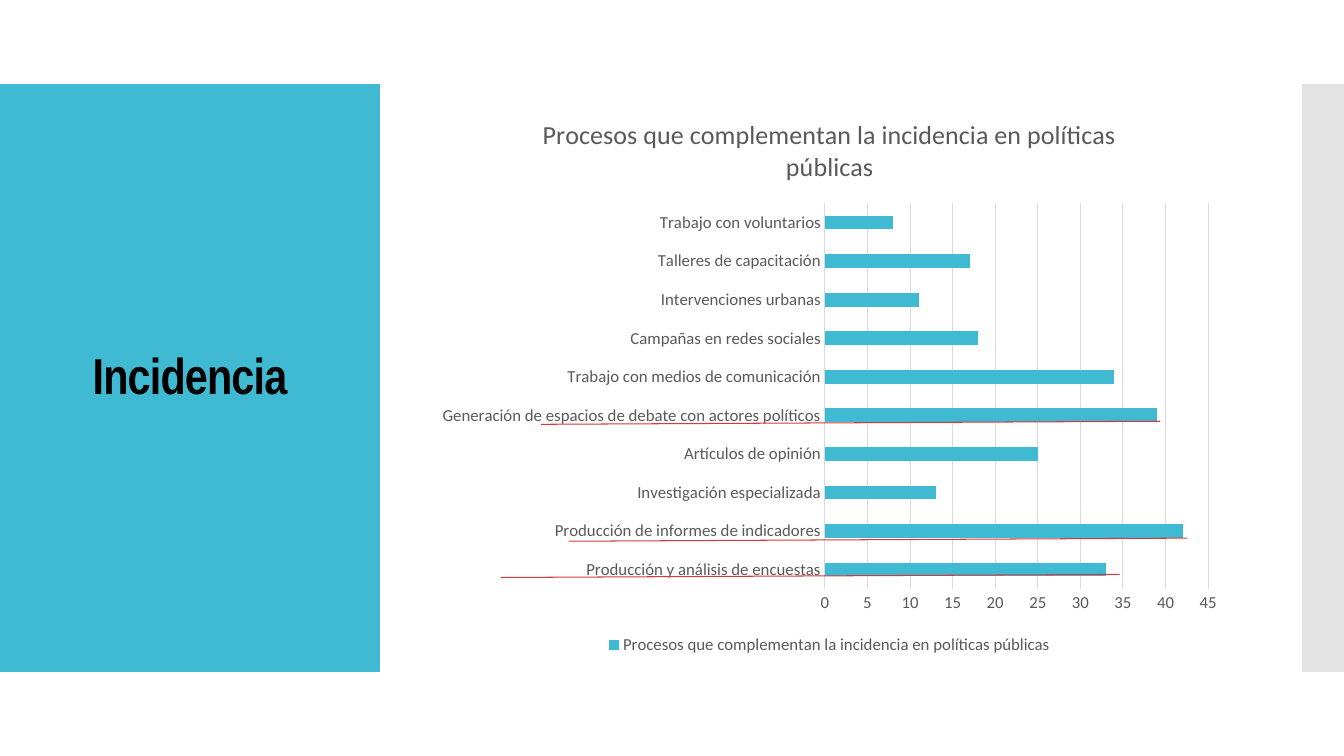
from lxml.etree import SubElement
from pptx import Presentation
from pptx.chart.data import CategoryChartData
from pptx.dml.color import RGBColor
from pptx.enum.chart import XL_CHART_TYPE, XL_LEGEND_POSITION, XL_TICK_MARK
from pptx.enum.shapes import MSO_CONNECTOR, MSO_SHAPE
from pptx.enum.text import MSO_ANCHOR, MSO_AUTO_SIZE, PP_ALIGN
from pptx.oxml.ns import qn
from pptx.util import Pt

COLORS = {
    "teal": "40BAD2",
    "gray": "C8C8C8",
    "grid": "D9D9D9",
    "text": "595959",
    "black": "000000",
    "red": "D5393D",
}
TOPIC = "Procesos que complementan la incidencia en políticas públicas"
COUNTS = {
    "Producción y análisis de encuestas": 33,
    "Producción de informes de indicadores": 42,
    "Investigación especializada": 13,
    "Artículos de opinión": 25,
    "Generación de espacios de debate con actores políticos": 39,
    "Trabajo con medios de comunicación": 34,
    "Campañas en redes sociales": 18,
    "Intervenciones urbanas": 11,
    "Talleres de capacitación": 17,
    "Trabajo con voluntarios": 8,
}
MARKS = [(82, 235.4), (101.5, 318.9), (53.2, 344.8)]


def color(name):
    return RGBColor.from_string(COLORS[name])


def set_font(font, size, name="text", face="Calibri", bold=False):
    font.size = Pt(size)
    font.name = face
    font.bold = bold
    font.color.rgb = color(name)


def set_line(line, name):
    line.color.rgb = color(name)
    line.width = Pt(0.75)


def add_block(slide, box, name):
    block = slide.shapes.add_shape(MSO_SHAPE.RECTANGLE, *map(Pt, box))
    block.shadow.inherit = False
    block.fill.solid()
    block.fill.fore_color.rgb = color(name)
    block.line.fill.background()
    return block


def add_panel(slide, box):
    left, top, width, height = box
    panel = add_block(slide, box, "teal")
    title = slide.shapes.title
    panel.element.addnext(title.element)
    title.left, title.top = Pt(left + 20), Pt(top + 28.8)
    title.width, title.height = Pt(width - 40), Pt(height - 57.6)
    frame = title.text_frame
    frame.text = "Incidencia"
    frame.word_wrap = True
    frame.auto_size = MSO_AUTO_SIZE.NONE
    frame.vertical_anchor = MSO_ANCHOR.MIDDLE
    line = frame.paragraphs[0]
    line.alignment = PP_ALIGN.CENTER
    line.line_spacing = 0.9
    run = line.runs[0]
    set_font(run.font, 36, "black", "Arial Narrow", True)
    run.font._element.set("spc", "-60")


def add_stripe(slide, box):
    stripe = add_block(slide, box, "gray")
    fill = stripe.element.spPr.find(qn("a:solidFill"))
    SubElement(fill[0], qn("a:alpha"), val="50000")


def add_bars(slide, box):
    data = CategoryChartData()
    data.categories = list(COUNTS)
    data.add_series(TOPIC, list(COUNTS.values()))
    kind = XL_CHART_TYPE.BAR_CLUSTERED
    chart = slide.shapes.add_chart(kind, *map(Pt, box), data).chart
    set_font(chart.font, 10, "black")

    chart.has_title = True
    head = chart.chart_title.text_frame
    head.text = TOPIC
    set_font(head.paragraphs[0].runs[0].font, 18.6)
    chart.chart_title.include_in_layout = False

    chart.has_legend = True
    chart.legend.position = XL_LEGEND_POSITION.BOTTOM
    chart.legend.include_in_layout = False
    set_font(chart.legend.font, 12)

    plot = chart.plots[0]
    plot.gap_width = 182
    plot.vary_by_categories = False
    fill = plot.series[0].format.fill
    fill.solid()
    fill.fore_color.rgb = color("teal")

    for axis in (chart.category_axis, chart.value_axis):
        axis.major_tick_mark = XL_TICK_MARK.NONE
        axis.minor_tick_mark = XL_TICK_MARK.NONE
        set_font(axis.tick_labels.font, 12)
    set_line(chart.category_axis.format.line, "grid")
    scale = chart.value_axis
    scale.format.line.fill.background()
    scale.has_major_gridlines = True
    set_line(scale.major_gridlines.format.line, "grid")
    scale.minimum_scale, scale.maximum_scale = 0, 45
    scale.major_unit = 5


def add_marks(slide, box):
    left, top = box[:2]
    for x, y in MARKS:
        ends = (left + x, top + y, left + x + 442, top + y - 2.2)
        mark = slide.shapes.add_connector(MSO_CONNECTOR.STRAIGHT, *map(Pt, ends))
        set_line(mark.line, "red")
        SubElement(mark.element.spPr, qn("a:effectLst"))


def main():
    deck = Presentation()
    deck.slide_width, deck.slide_height = Pt(960), Pt(540)
    slide = deck.slides.add_slide(deck.slide_layouts[5])
    area = (304.6, 67.7, 576, 403.2)
    add_panel(slide, (0, 60, 271.4, 420))
    add_stripe(slide, (930, 60, 30, 420))
    add_bars(slide, area)
    add_marks(slide, area)
    deck.save("out.pptx")


if __name__ == "__main__":
    main()
